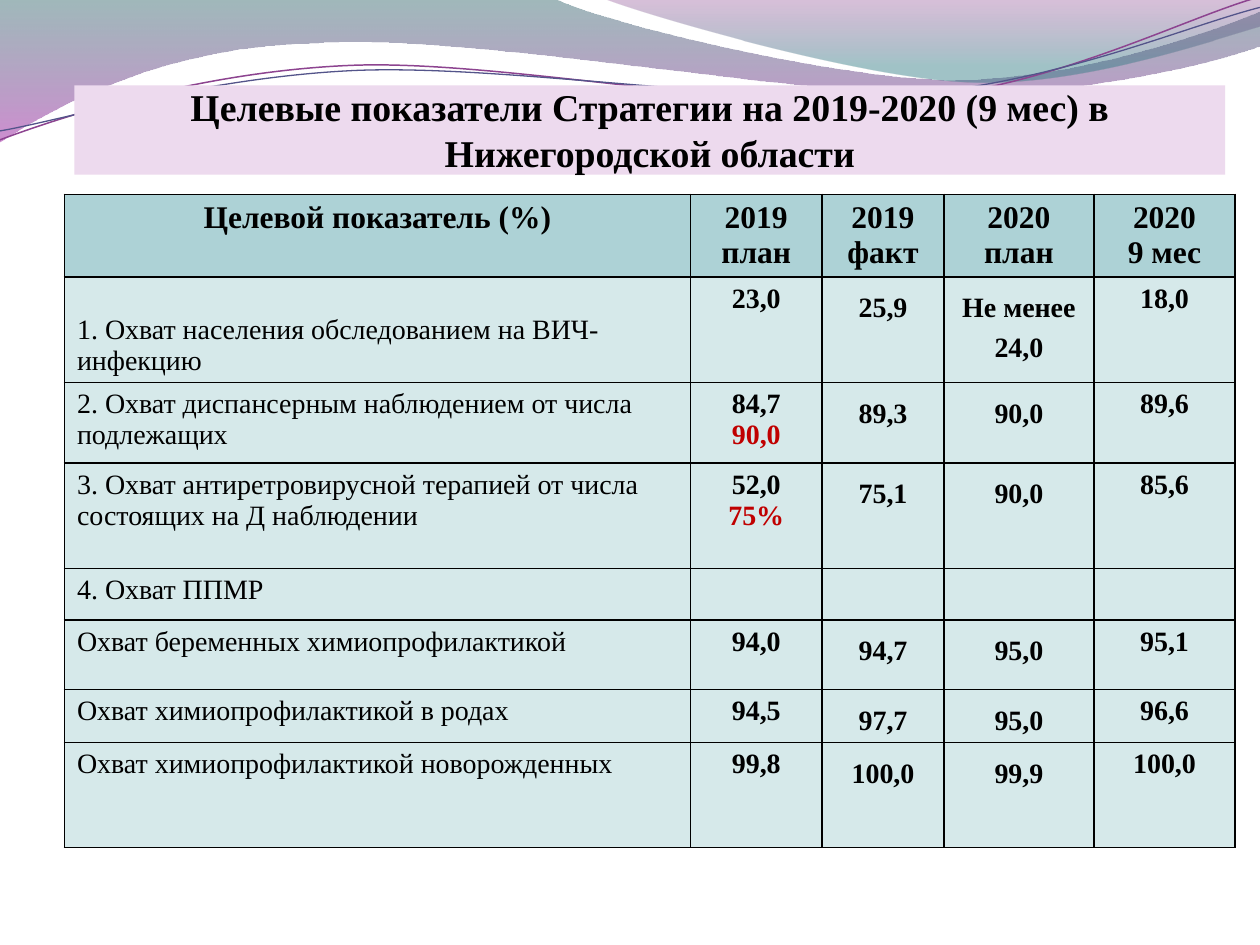
import pptx
import pptx.util
import pptx.dml.color
import pptx.enum.text
import pptx.oxml
import pptx.oxml.ns
from lxml import etree

Cm, Pt = pptx.util.Cm, pptx.util.Pt
RGBColor = pptx.dml.color.RGBColor
PP_ALIGN = pptx.enum.text.PP_ALIGN
MSO_ANCHOR = pptx.enum.text.MSO_ANCHOR
qn = pptx.oxml.ns.qn

BLACK = RGBColor(0x00, 0x00, 0x00)
RED = RGBColor(0xC0, 0x00, 0x00)
LILAC = RGBColor(0xED, 0xDA, 0xEE)
HEADER = RGBColor(0xAD, 0xD2, 0xD6)
BODY = RGBColor(0xD6, 0xE9, 0xEA)
DEEP_TEAL = RGBColor(0x2D, 0x63, 0x68)
MAGENTA = RGBColor(0xA5, 0x30, 0xA9)
PURPLE = RGBColor(0x7F, 0x2F, 0x82)
TEAL = RGBColor(0x2F, 0x7B, 0x82)
VIOLET = RGBColor(0x8D, 0x44, 0x90)
INDIGO = RGBColor(0x53, 0x54, 0x8A)

TITLE = "Целевые показатели Стратегии на 2019-2020 (9 мес) в Нижегородской области"
COLUMNS = [12.62, 2.65, 2.46, 3.02, 2.85]
ROWS = [1.65, 2.13, 1.62, 2.13, 1.04, 1.4, 1.05, 2.11]
DATA = [
    ["Целевой показатель (%)", "2019\nплан", "2019\nфакт", "2020\nплан", "2020\n9 мес"],
    ["1. Охват населения обследованием на ВИЧ-инфекцию", "23,0", "25,9", "Не менее 24,0", "18,0"],
    ["2. Охват диспансерным наблюдением от числа подлежащих", "84,7\n90,0", "89,3", "90,0", "89,6"],
    ["3. Охват антиретровирусной терапией от числа состоящих на Д наблюдении",
     "52,0\n75%", "75,1", "90,0", "85,6"],
    ["4. Охват ППМР", "", "", "", ""],
    ["Охват беременных химиопрофилактикой", "94,0", "94,7", "95,0", "95,1"],
    ["Охват химиопрофилактикой в родах", "94,5", "97,7", "95,0", "96,6"],
    ["Охват химиопрофилактикой новорожденных", "99,8", "100,0", "99,9", "100,0"],
]

LEFT_WAVE = [
    (0, 0), (11.18, -0.03),
    (12.09, 0.43, 16.87, 1.6, 19.25, 1.6), (21.67, 1.6, 24.33, 0.66, 25.4, 0.23),
    (25.43, 0.91),
    (24.97, 1.12, 22.1, 1.93, 18.95, 1.9), (15.8, 1.9, 9.7, 0.71, 6.53, 0.86),
    (3.28, 0.91, 1.17, 2.11, -0.03, 2.87),
]
RIGHT_WAVE = [
    (12.17, -0.03),
    (12.93, 0.28, 17.32, 1.57, 19.53, 1.65), (21.74, 1.75, 24.41, 0.81, 25.4, 0.53),
    (25.4, 0),
]
VIOLET_LINE = [
    (0, 2.82), (1.22, 2.36, 4.01, 1.45, 7.04, 1.32),
    (10.03, 1.19, 15.06, 2.26, 18.11, 2.03), (21.16, 1.8, 23.83, 0.38, 25.35, -0.05),
]
INDIGO_LINE = [
    (0, 2.64), (1.19, 2.44, 4.17, 1.55, 7.19, 1.42),
    (10.24, 1.3, 15.16, 2.13, 18.21, 1.91), (21.23, 1.7, 23.9, 0.53, 25.4, 0.15),
]


class Deck:
    font = "Times New Roman"

    def __init__(self, prs):
        self.s = prs.slides.add_slide(prs.slide_layouts[5])

    def style(self, p, size, bold=True, color=BLACK, align=PP_ALIGN.CENTER):
        p.alignment = align
        f = p.font
        f.name, f.size, f.bold = self.font, Pt(size), bold
        f.color.rgb = color

    def outline(self, segments, close):
        ends = [(Cm(seg[-2]), Cm(seg[-1])) for seg in segments]
        fb = self.s.shapes.build_freeform(*ends[0], scale=1.0)
        fb.add_line_segments(ends[1:], close=close)
        sp = fb.convert_to_shape()
        sp.shadow.inherit = False
        lines = list(sp._element.iter(qn("a:lnTo")))
        for line, seg in zip(lines, segments[1:]):
            if len(seg) == 6:
                line.tag = qn("a:cubicBezTo")
                for i in (0, 2):
                    x, y = Cm(seg[i]) - sp.left, Cm(seg[i + 1]) - sp.top
                    line.insert(i // 2, etree.Element(qn("a:pt"), x=str(x), y=str(y)))
        return sp

    def wave(self, segments, *stops):
        sp = self.outline(segments, True)
        sp.line.fill.background()
        sp.fill.gradient()
        sp.fill.gradient_angle = 270
        for stop, (position, color, opacity) in zip(sp.fill.gradient_stops, stops):
            stop.position = position
            stop.color.rgb = color
        clrs = sp._element.spPr.find(qn("a:gradFill")).iter(qn("a:srgbClr"))
        for clr, (position, color, opacity) in zip(clrs, stops):
            etree.SubElement(clr, qn("a:alpha")).set("val", str(opacity * 1000))

    def curve(self, segments, color, width):
        sp = self.outline(segments, False)
        sp.fill.background()
        sp.line.color.rgb = color
        sp.line.width = Pt(width)

    def title(self, text, x, y, w, h):
        sp = self.s.shapes.title
        sp.left, sp.top, sp.width, sp.height = Cm(x), Cm(y), Cm(w), Cm(h)
        sp.fill.solid()
        sp.fill.fore_color.rgb = LILAC
        tf = sp.text_frame
        tf.text = text
        tf.word_wrap = True
        tf.vertical_anchor = MSO_ANCHOR.BOTTOM
        tf.margin_left = tf.margin_right = tf.margin_bottom = 0
        self.style(tf.paragraphs[0], 21.6)
        self.s.shapes._spTree.append(sp._element)

    def border(self, cell):
        tcPr = cell._tc.get_or_add_tcPr()
        for i, side in enumerate(("lnL", "lnR", "lnT", "lnB")):
            ln = etree.Element(qn("a:" + side), w=str(Pt(1)))
            fill = etree.SubElement(ln, qn("a:solidFill"))
            etree.SubElement(fill, qn("a:srgbClr"), val=str(BLACK))
            tcPr.insert(i, ln)

    def cell(self, cell, text, row, col):
        cell.fill.solid()
        cell.fill.fore_color.rgb = BODY if row else HEADER
        self.border(cell)
        if not text:
            return
        cell.text = text
        label = row > 0 and col == 0
        for i, p in enumerate(cell.text_frame.paragraphs):
            self.style(p, 16 if row else 18, not label, RED if row and i else BLACK,
                       PP_ALIGN.LEFT if label else PP_ALIGN.CENTER)
            if row and col in (2, 3):
                p.line_spacing = 1.3

    def table(self, data, x, y, columns, rows):
        frame = self.s.shapes.add_table(len(rows), len(columns), Cm(x), Cm(y),
                                        Cm(sum(columns)), Cm(sum(rows)))
        table = frame.table
        for column, width in zip(table.columns, columns):
            column.width = Cm(width)
        for r, height in enumerate(rows):
            table.rows[r].height = Cm(height)
            for c, text in enumerate(data[r]):
                self.cell(table.cell(r, c), text, r, c)
        table.cell(1, 0).vertical_anchor = MSO_ANCHOR.BOTTOM


def main():
    prs = pptx.Presentation()
    prs.slide_width, prs.slide_height = Cm(25.4), Cm(19.05)
    deck = Deck(prs)
    deck.wave(LEFT_WAVE, (0, DEEP_TEAL, 45), (1, MAGENTA, 55))
    deck.wave(RIGHT_WAVE, (0, PURPLE, 30), (0.8, TEAL, 45))
    deck.curve(VIOLET_LINE, VIOLET, 0.85)
    deck.curve(INDIGO_LINE, INDIGO, 0.75)
    deck.title(TITLE, 1.5, 1.72, 23.2, 1.8)
    deck.table(DATA, 1.3, 3.92, COLUMNS, ROWS)
    prs.save("out.pptx")


if __name__ == "__main__":
    main()
